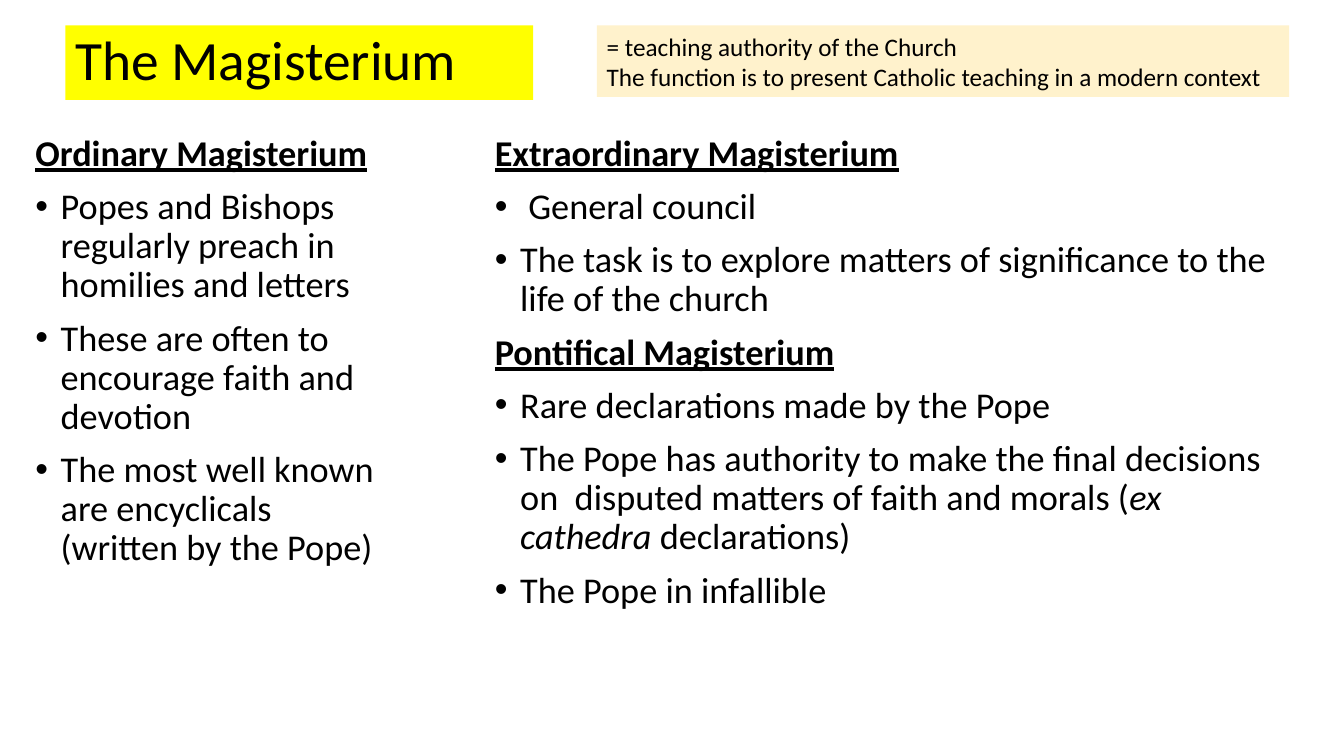
"""Build the slide on the Magisterium."""
from lxml.etree import SubElement
from pptx import Presentation
from pptx.dml.color import RGBColor
from pptx.enum.shapes import MSO_SHAPE
from pptx.enum.text import MSO_ANCHOR, PP_ALIGN
from pptx.oxml.ns import qn
from pptx.util import Cm, Pt

COLORS = {"text": "000000", "title": "FFFF00", "note": "FFF2CC"}
FONT = "Calibri"
TITLE_SIZE, BODY_SIZE, NOTE_SIZE = 39.6, 25.9, 18
TOP, BODY_TOP = 0.64, 3.28
INDENT = Cm(0.64)

ORDINARY = [
    ("Ordinary Magisterium", [
        ["Popes and Bishops regularly preach in homilies and letters"],
        ["These are often to encourage faith and devotion"],
        ["The most well known are encyclicals (written by the Pope)"],
    ]),
]
EXTRAORDINARY = [
    ("Extraordinary Magisterium", [
        [" General council"],
        ["The task is to explore matters of significance to the life of the church"],
    ]),
    ("Pontifical Magisterium", [
        ["Rare declarations made by the Pope"],
        ["The Pope has authority to make the final decisions on  disputed matters "
         "of faith and morals (", "ex cathedra", " declarations)"],
        ["The Pope in infallible"],
    ]),
]


def add_run(p, text, size=BODY_SIZE, bold=False, italic=False, underline=False):
    """Add a formatted run to a paragraph."""
    r = p.add_run()
    r.text = text
    r.font.name, r.font.size = FONT, Pt(size)
    r.font.bold, r.font.italic, r.font.underline = bold, italic, underline
    r.font.color.rgb = RGBColor.from_string(COLORS["text"])


def next_paragraph(tf):
    """Return the empty first paragraph, or a new one."""
    p = tf.paragraphs[0]
    return tf.add_paragraph() if p.runs else p


def add_banner(s, box, lines, color, size, spacing=1.0):
    """Add a filled rectangle with left-aligned lines."""
    sp = s.shapes.add_shape(MSO_SHAPE.RECTANGLE, *map(Cm, box))
    sp.shadow.inherit = False
    sp.fill.solid()
    sp.fill.fore_color.rgb = RGBColor.from_string(COLORS[color])
    sp.line.fill.background()
    tf = sp.text_frame
    tf.word_wrap = True
    tf.vertical_anchor = MSO_ANCHOR.MIDDLE
    for line in lines:
        p = next_paragraph(tf)
        p.alignment, p.line_spacing = PP_ALIGN.LEFT, spacing
        add_run(p, line, size=size)


def add_bullet(p):
    """Give a paragraph a bullet with a hanging indent."""
    pPr = p._p.get_or_add_pPr()
    pPr.set("marL", str(INDENT))
    pPr.set("indent", str(-INDENT))
    SubElement(pPr, qn("a:buFont")).set("typeface", "Arial")
    SubElement(pPr, qn("a:buChar")).set("char", "•")


def add_body_paragraph(tf):
    """Add a paragraph with the body spacing."""
    p = next_paragraph(tf)
    p.line_spacing, p.space_before = 0.9, Pt(10)
    return p


def add_column(s, box, sections):
    """Add a text column of headings with bullets below."""
    tf = s.shapes.add_textbox(*map(Cm, box)).text_frame
    tf.word_wrap = True
    for heading, bullets in sections:
        add_run(add_body_paragraph(tf), heading, bold=True, underline=True)
        for parts in bullets:
            p = add_body_paragraph(tf)
            add_bullet(p)
            for i, part in enumerate(parts):
                add_run(p, part, italic=i % 2 == 1)


def main():
    """Build and save the slide."""
    prs = Presentation()
    prs.slide_width, prs.slide_height = Cm(33.87), Cm(19.05)
    s = prs.slides.add_slide(prs.slide_layouts[6])
    add_banner(s, (1.65, TOP, 11.79, 1.88), ["The Magisterium"],
               "title", TITLE_SIZE, spacing=0.9)
    add_column(s, (0.64, BODY_TOP, 9.12, 12.09), ORDINARY)
    add_column(s, (12.22, BODY_TOP, 20.27, 15.11), EXTRAORDINARY)
    add_banner(s, (15.04, TOP, 17.45, 1.8),
               ["= teaching authority of the Church",
                "The function is to present Catholic teaching in a modern context"],
               "note", NOTE_SIZE)
    prs.save("out.pptx")


if __name__ == "__main__":
    main()
